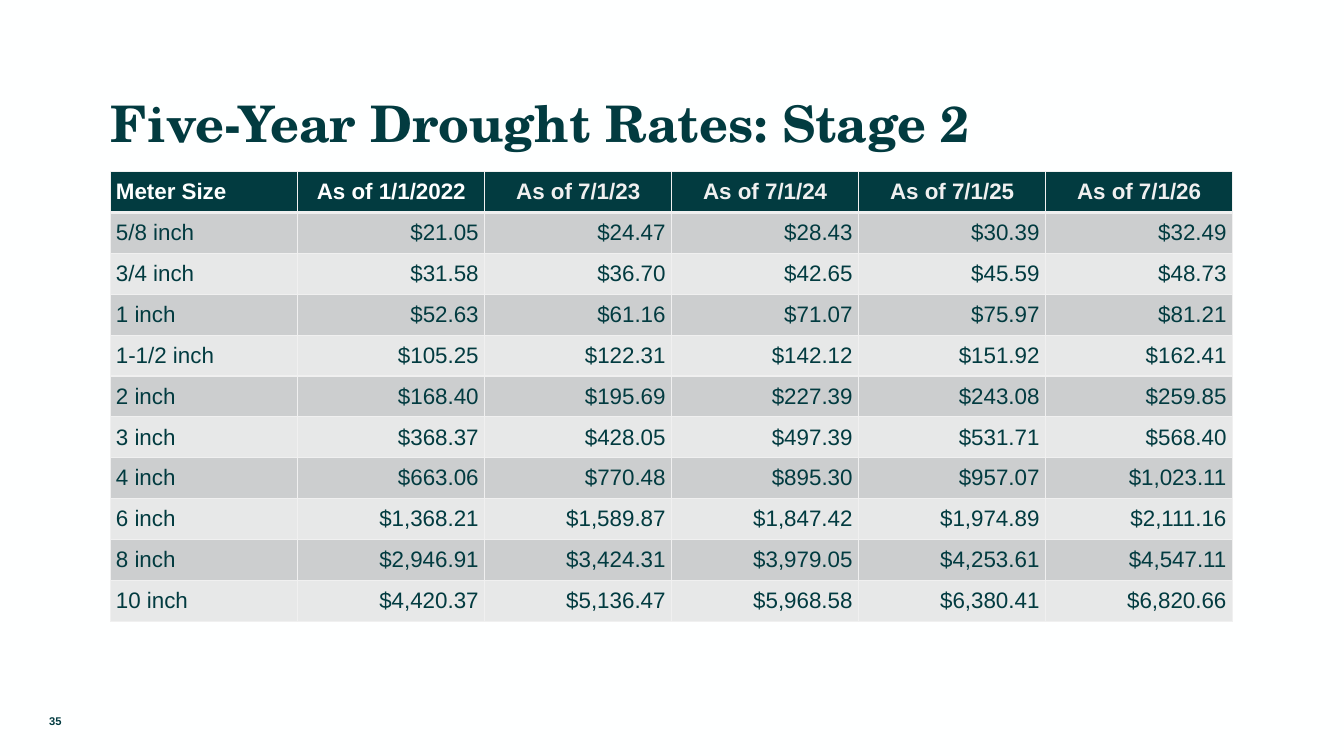
from dataclasses import dataclass
from lxml.etree import SubElement
from pptx import Presentation
from pptx.dml.color import RGBColor
from pptx.enum.text import MSO_ANCHOR, MSO_AUTO_SIZE, PP_ALIGN
from pptx.oxml.ns import qn
from pptx.util import Pt


@dataclass
class Theme:
    dark: str = "023B40"
    white: str = "FEFFFF"
    rule: str = "F0F0F0"
    bands: tuple = ("CCCECF", "E7E8E8")
    serif: str = "TeX Gyre Schola"
    sans: str = "Arial"
    head: int = 36
    body: int = 16
    foot: int = 8


theme = Theme()
color = RGBColor.from_string


def write(frame, words, size=theme.body, face=theme.sans, ink=theme.dark,
          bold=False, align=PP_ALIGN.LEFT):
    frame.word_wrap = True
    para = frame.paragraphs[0]
    para.alignment = align
    run = para.add_run()
    run.text = words
    run.font.size = Pt(size)
    run.font.name = face
    run.font.bold = bold
    run.font.color.rgb = color(ink)


def border(cell, widths):
    props = cell._tc.get_or_add_tcPr()
    for side, width in zip("LRTB", widths):
        line = SubElement(props, qn(f"a:ln{side}"), w=str(Pt(width)))
        fill = SubElement(line, qn("a:solidFill"))
        SubElement(fill, qn("a:srgbClr"), val=theme.rule)


# Slide
deck = Presentation()
deck.slide_width, deck.slide_height = Pt(960), Pt(540)
slide = deck.slides.add_slide(deck.slide_layouts[5])
slide.background.fill.solid()
slide.background.fill.fore_color.rgb = color(theme.white)
left, wide = 79.2, 801.4

# Title
title = slide.shapes.title
title.left, title.top = Pt(left), Pt(46)
title.width, title.height = Pt(wide), Pt(62.7)
frame = title.text_frame
frame.auto_size = MSO_AUTO_SIZE.NONE
frame.vertical_anchor = MSO_ANCHOR.BOTTOM
frame.margin_left = frame.margin_right = frame.margin_bottom = 0
frame.margin_top = Pt(15)
write(frame, "Five-Year Drought Rates: Stage 2", size=theme.head,
      face=theme.serif, bold=True)

# Rates by meter size
heads = ["Meter Size", "As of 1/1/2022", "As of 7/1/23", "As of 7/1/24",
         "As of 7/1/25", "As of 7/1/26"]
rates = [
    ("5/8 inch", "$21.05", "$24.47", "$28.43", "$30.39", "$32.49"),
    ("3/4 inch", "$31.58", "$36.70", "$42.65", "$45.59", "$48.73"),
    ("1 inch", "$52.63", "$61.16", "$71.07", "$75.97", "$81.21"),
    ("1-1/2 inch", "$105.25", "$122.31", "$142.12", "$151.92", "$162.41"),
    ("2 inch", "$168.40", "$195.69", "$227.39", "$243.08", "$259.85"),
    ("3 inch", "$368.37", "$428.05", "$497.39", "$531.71", "$568.40"),
    ("4 inch", "$663.06", "$770.48", "$895.30", "$957.07", "$1,023.11"),
    ("6 inch", "$1,368.21", "$1,589.87", "$1,847.42", "$1,974.89", "$2,111.16"),
    ("8 inch", "$2,946.91", "$3,424.31", "$3,979.05", "$4,253.61", "$4,547.11"),
    ("10 inch", "$4,420.37", "$5,136.47", "$5,968.58", "$6,380.41", "$6,820.66"),
]
rows = [heads, *rates]
high = 29.2
table = slide.shapes.add_table(len(rows), len(heads), Pt(left), Pt(122.6),
                               Pt(wide), Pt(high * len(rows))).table
for row in table.rows:
    row.height = Pt(high)

for r, row in enumerate(rows):
    for c, words in enumerate(row):
        cell = table.cell(r, c)
        cell.vertical_anchor = MSO_ANCHOR.MIDDLE
        cell.margin_top = cell.margin_bottom = 0
        cell.margin_left = Pt(0 if c else 3.6)
        # Rates stand a little off the right edge
        cell.margin_right = Pt(4.4 if r and c else 0)
        border(cell, (1, 1, 3 if r == 1 else 1, 3 if r == 0 else 1))
        cell.fill.solid()
        cell.fill.fore_color.rgb = color(theme.bands[(r - 1) % 2] if r else theme.dark)
        if r:
            ink = theme.dark
            align = PP_ALIGN.RIGHT if c else PP_ALIGN.LEFT
        else:
            ink = theme.white if c < 2 else theme.rule
            align = PP_ALIGN.CENTER if c else PP_ALIGN.LEFT
        write(cell.text_frame, words, ink=ink, bold=r == 0, align=align)

# Page number
page = slide.shapes.add_textbox(0, Pt(500.4), Pt(left), Pt(28.8)).text_frame
page.vertical_anchor = MSO_ANCHOR.MIDDLE
write(page, "35", size=theme.foot, bold=True, align=PP_ALIGN.CENTER)

deck.save("out.pptx")
